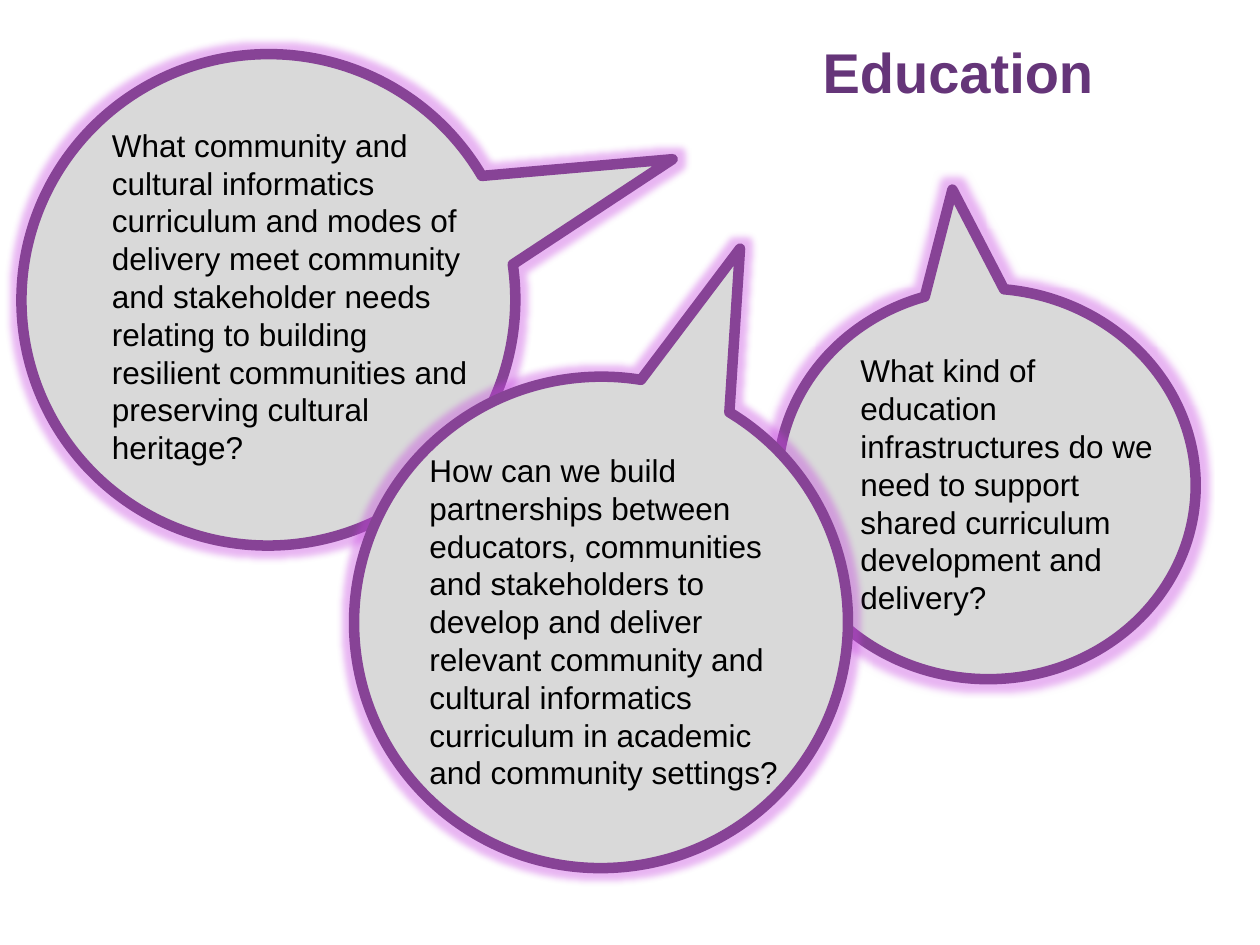
"""Build the Education slide with three question callouts."""
from lxml import etree
from pptx import Presentation
from pptx.dml.color import RGBColor
from pptx.enum.shapes import MSO_SHAPE
from pptx.enum.text import MSO_ANCHOR, PP_ALIGN
from pptx.oxml.ns import qn
from pptx.util import Pt

CALLOUT = MSO_SHAPE.OVAL_CALLOUT
TOP = MSO_ANCHOR.TOP
RIGHT = PP_ALIGN.RIGHT


def rgb(value):
    return RGBColor.from_string(value)


class Deck:
    font = "Arial"
    title_color = "653579"
    text_color = "000000"
    fill = "D9D9D9"
    line = "874396"
    glow = "C646DF"

    def __init__(self, width, height):
        self.prs = Presentation()
        self.prs.slide_width, self.prs.slide_height = Pt(width), Pt(height)
        self.s = self.prs.slides.add_slide(self.prs.slide_layouts[5])

    def style(self, p, size, color, bold=False):
        for r in p.runs:
            r.font.name = self.font
            r.font.size = Pt(size)
            r.font.bold = bold
            r.font.color.rgb = rgb(color)

    def title(self, text, x, y, w, h):
        sp = self.s.shapes.title
        sp.left, sp.top, sp.width, sp.height = Pt(x), Pt(y), Pt(w), Pt(h)
        tf = sp.text_frame
        tf.text = text
        tf.vertical_anchor = TOP
        tf.margin_left = tf.margin_top = 0
        p = tf.paragraphs[0]
        p.alignment = RIGHT
        self.style(p, 32, self.title_color, True)

    def callout(self, x, y, w, h, rotation, tip):
        sp = self.s.shapes.add_shape(CALLOUT, Pt(x), Pt(y), Pt(w), Pt(h))
        sp.rotation = rotation
        sp.adjustments[0], sp.adjustments[1] = tip
        sp.fill.solid()
        sp.fill.fore_color.rgb = rgb(self.fill)
        sp.line.color.rgb = rgb(self.line)
        sp.line.width = Pt(6)
        sp.shadow.inherit = False
        effects = sp._element.spPr.find(qn("a:effectLst"))
        glow = etree.SubElement(effects, qn("a:glow"), rad=str(Pt(8)))
        color = etree.SubElement(glow, qn("a:srgbClr"), val=self.glow)
        etree.SubElement(color, qn("a:alpha"), val="40000")

    def text(self, lines, x, y, w, h):
        sp = self.s.shapes.add_textbox(Pt(x), Pt(y), Pt(w), Pt(h))
        tf = sp.text_frame
        tf.word_wrap = True
        tf.text = "\n".join(lines)
        for p in tf.paragraphs:
            self.style(p, 18, self.text_color)

    def save(self):
        self.prs.save("out.pptx")


def main():
    deck = Deck(720, 540)
    deck.title("Education", 93.6, 21.6, 538.56, 90)
    deck.callout(452.16, 156.96, 223.2, 239.04, 93.7, (-0.746, 0.127))
    deck.callout(12.96, 30.24, 280.8, 282.24, 82, (-0.169, -0.85))
    deck.text(["What community and cultural informatics curriculum and modes of "
               "delivery meet community and stakeholder needs relating to building "
               "resilient communities and preserving cultural heritage?"],
              56.88, 68.4, 221.04, 203.76)
    deck.text(["What kind of education infrastructures do we need to support "
               "shared curriculum development and delivery?"],
              484.56, 197.28, 181.44, 159.84)
    deck.callout(203.04, 214.56, 280.8, 282.24, 82, (-0.714, -0.384))
    deck.text(["How can we build partnerships between educators, communities "
               "and stakeholders to develop and deliver",
               "relevant community and cultural informatics",
               "curriculum in academic and community settings?"],
              238.32, 254.16, 221.04, 203.76)
    deck.save()


if __name__ == "__main__":
    main()
